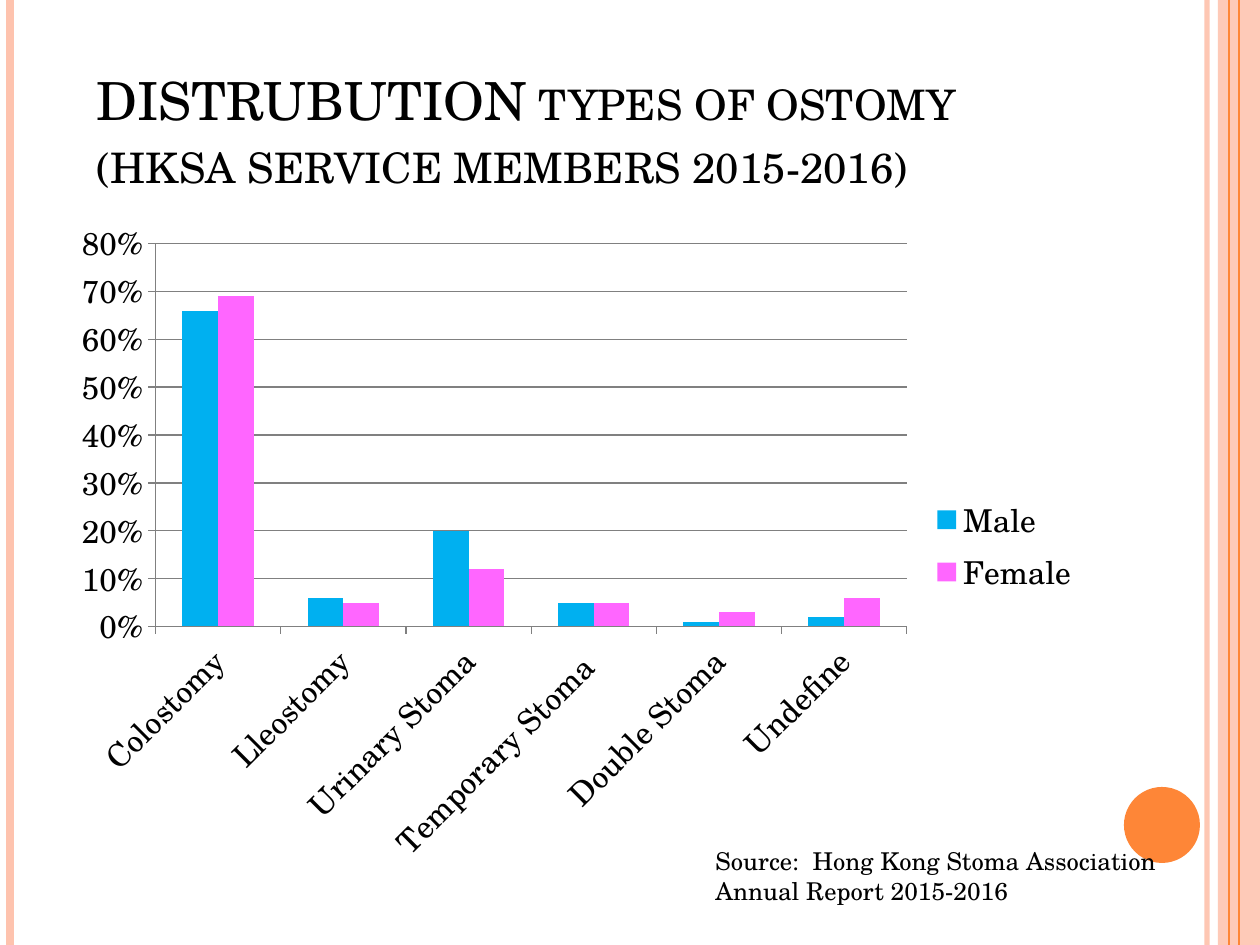
from lxml.etree import SubElement
from pptx import Presentation
from pptx.chart.data import CategoryChartData
from pptx.dml.color import RGBColor
from pptx.enum.chart import XL_CHART_TYPE, XL_LEGEND_POSITION, XL_TICK_MARK
from pptx.enum.shapes import MSO_CONNECTOR, MSO_SHAPE
from pptx.enum.text import MSO_ANCHOR, PP_ALIGN
from pptx.oxml import parse_xml
from pptx.oxml.ns import nsdecls, qn
from pptx.util import Pt

EMU_PER_PIXEL = 914400 / 126
FONT = "TeX Gyre Schola"
BLACK = RGBColor(0x00, 0x00, 0x00)
GREY = RGBColor(0x80, 0x80, 0x80)
PEACH = RGBColor(0xFE, 0xC3, 0xAE)
ORANGE = RGBColor(0xFE, 0x86, 0x37)
BLUE = RGBColor(0x00, 0xB0, 0xF0)
PINK = RGBColor(0xFF, 0x66, 0xFF)


def px(*lengths):
    return [round(length * EMU_PER_PIXEL) for length in lengths]


def format_font(font, size):
    font.color.rgb = BLACK
    for name, value in {"name": FONT, "size": Pt(size), "bold": False}.items():
        setattr(font, name, value)


presentation = Presentation()
presentation.slide_width, presentation.slide_height = px(1260, 945)
slide = presentation.slides.add_slide(presentation.slide_layouts[5])
shapes = slide.shapes

# Side bands: x, colour, width in points, opacity in percent
band = shapes.add_shape(MSO_SHAPE.RECTANGLE, *px(1218, 0, 42, 945))
circle = shapes.add_shape(MSO_SHAPE.OVAL, *px(1124, 787, 76, 76))
for shape, color in ((band, PEACH), (circle, ORANGE)):
    shape.shadow.inherit = False
    shape.fill.solid()
    shape.fill.fore_color.rgb = color
    shape.line.fill.background()
translucent = [(band, 87)]

for x, color, width, opacity in (
    (1207, PEACH, 3, 93),
    (10, PEACH, 4.5, 100),
    (1239, ORANGE, 1.5, 100),
    (1229, ORANGE, 0.75, 100),
):
    stripe = shapes.add_connector(MSO_CONNECTOR.STRAIGHT, *px(x, 0, x, 945))
    stripe.line.color.rgb = color
    stripe.line.width = Pt(width)
    SubElement(stripe._element.spPr, qn("a:effectLst"))
    if opacity < 100:
        translucent.append((stripe, opacity))

for shape, opacity in translucent:
    color_element = next(shape._element.spPr.iter(qn("a:srgbClr")))
    SubElement(color_element, qn("a:alpha"), val=str(opacity * 1000))

# Chart
chart_data = CategoryChartData(number_format="0%")
chart_data.categories = ["Colostomy", "Lleostomy", "Urinary Stoma",
                         "Temporary Stoma ", "Double Stoma", "Undefine"]
chart_data.add_series("Male", [0.66, 0.06, 0.2, 0.05, 0.01, 0.02])
chart_data.add_series("Female", [0.69, 0.05, 0.12, 0.05, 0.03, 0.06])
chart = shapes.add_chart(
    XL_CHART_TYPE.COLUMN_CLUSTERED, *px(63, 210, 1029, 672), chart_data
).chart
format_font(chart.font, 18)
chart.has_title = False
chart.has_legend = True
chart.legend.position = XL_LEGEND_POSITION.RIGHT
chart.legend.include_in_layout = False

plot = chart.plots[0]
plot.gap_width = 150
plot.overlap = 0
plot.vary_by_categories = False
for series, color in zip(plot.series, (BLUE, PINK)):
    series.format.fill.solid()
    series.format.fill.fore_color.rgb = color

value_axis, category_axis = chart.value_axis, chart.category_axis
axis_format = {"minimum_scale": 0, "maximum_scale": 0.8, "major_unit": 0.1,
               "has_major_gridlines": True}
for name, value in axis_format.items():
    setattr(value_axis, name, value)
value_axis.tick_labels.number_format = "0%"
value_axis.tick_labels.number_format_is_linked = False
for axis in (value_axis, category_axis):
    axis.major_tick_mark = XL_TICK_MARK.OUTSIDE
    format_font(axis.tick_labels.font, 18)
for line in (value_axis.format.line, category_axis.format.line,
             value_axis.major_gridlines.format.line):
    line.color.rgb = GREY
    line.width = Pt(0.75)
category_axis._element.find(qn("c:txPr")).find(qn("a:bodyPr")).set("rot", "-2700000")

plot_area = chart._chartSpace.chart.plotArea
for layout in plot_area.findall(qn("c:layout")):
    plot_area.remove(layout)
layout = parse_xml(f"<c:layout {nsdecls('c')}><c:manualLayout/></c:layout>")
for name, value in (("layoutTarget", "inner"), ("xMode", "edge"), ("yMode", "edge"),
                    ("x", 0.09), ("y", 0.05), ("w", 0.73), ("h", 0.57)):
    SubElement(layout[0], qn(f"c:{name}"), val=str(value))
plot_area.insert(0, layout)

# Title and source note
title = shapes.title
source_note = shapes.add_textbox(*px(703, 840, 498, 72))
title.left, title.top, title.width, title.height = px(84, 42, 1029, 158)
for shape, text, size, anchor in (
    (title, "DISTRUBUTION types of ostomy\v(hksa service members 2015-2016)",
     30, MSO_ANCHOR.BOTTOM),
    (source_note, "Source:  Hong Kong Stoma Association\vAnnual Report 2015-2016",
     14, MSO_ANCHOR.TOP),
):
    frame = shape.text_frame
    frame.text = text
    frame.word_wrap = True
    frame.vertical_anchor = anchor
    paragraph = frame.paragraphs[0]
    paragraph.alignment = PP_ALIGN.LEFT
    for run in paragraph.runs:
        format_font(run.font, size)
for run in title.text_frame.paragraphs[0].runs:
    run._r.get_or_add_rPr().set("cap", "small")

presentation.save("out.pptx")
